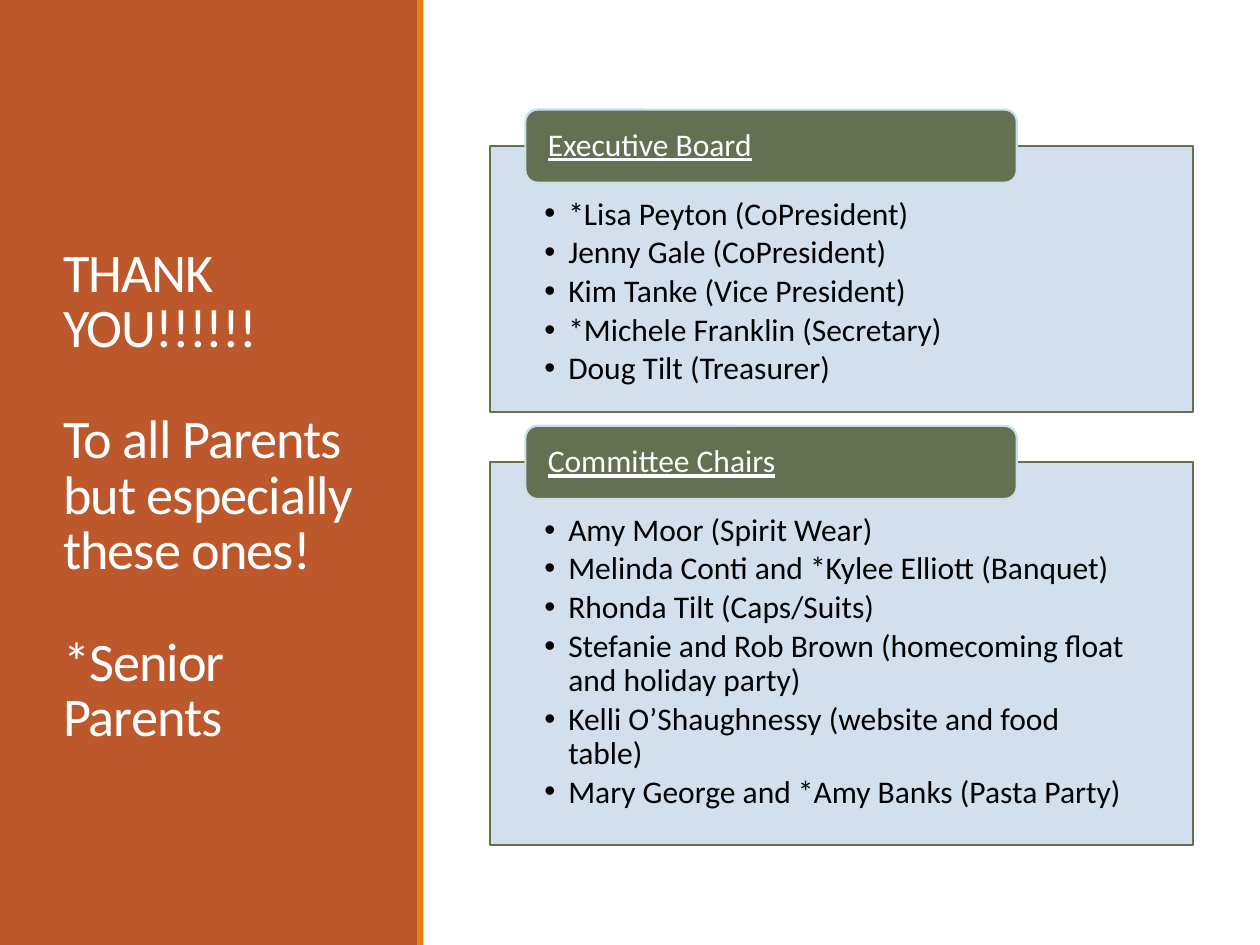
import pptx
import pptx.dml.color
import pptx.enum.shapes
import pptx.enum.text
import pptx.oxml.ns
import pptx.util
from lxml import etree
from pptx.util import Inches, Pt

COLORS = {
    "sidebar": "BD582C",
    "accent": "E48312",
    "panel": "CCDDEA",
    "header": "637052",
    "light": "FFFFFF",
    "dark": "000000",
}
FONT = "Calibri"
MESSAGE = ["THANK YOU!!!!!!", "To all Parents but especially these ones!", "*Senior Parents"]
GROUPS = [
    # heading, top, height, members
    ("Executive Board", 0.87, 2.4, [
        "*Lisa Peyton (CoPresident)",
        "Jenny Gale (CoPresident)",
        "Kim Tanke (Vice President)",
        "*Michele Franklin (Secretary)",
        "Doug Tilt (Treasurer)",
    ]),
    ("Committee Chairs", 3.38, 3.33, [
        "Amy Moor (Spirit Wear)",
        "Melinda Conti and *Kylee Elliott (Banquet)",
        "Rhonda Tilt (Caps/Suits)",
        "Stefanie and Rob Brown (homecoming float and holiday party)",
        "Kelli O’Shaughnessy (website and food table)",
        "Mary George and *Amy Banks (Pasta Party)",
    ]),
]


def rgb(name):
    return pptx.dml.color.RGBColor.from_string(COLORS[name])


def add_block(slide, kind, box, fill, line=None):
    block = slide.shapes.add_shape(kind, *(Inches(length) for length in box))
    block.shadow.inherit = False
    block.fill.solid()
    block.fill.fore_color.rgb = rgb(fill)
    if line:
        block.line.color.rgb = rgb(line)
        block.line.width = Pt(1.25)
    else:
        block.line.fill.background()
    return block


def set_frame(shape, margins, anchor):
    frame = shape.text_frame
    frame.word_wrap = True
    frame.auto_size = pptx.enum.text.MSO_AUTO_SIZE.NONE
    frame.vertical_anchor = anchor
    (frame.margin_left, frame.margin_top,
     frame.margin_right, frame.margin_bottom) = (Inches(margin) for margin in margins)
    return frame


def format_paragraph(paragraph, size, color, line_spacing):
    paragraph.alignment = pptx.enum.text.PP_ALIGN.LEFT
    paragraph.line_spacing = line_spacing
    paragraph.font.name = FONT
    paragraph.font.size = Pt(size)
    paragraph.font.color.rgb = rgb(color)


def add_bullet(paragraph):
    properties = paragraph._p.get_or_add_pPr()
    properties.set("marL", str(Inches(0.19)))
    properties.set("indent", str(Inches(-0.19)))
    for tag, name, value in (("a:buFont", "typeface", "Arial"), ("a:buChar", "char", "•")):
        etree.SubElement(properties, pptx.oxml.ns.qn(tag)).set(name, value)


def add_sidebar(slide, left, top, width, height):
    rectangle = pptx.enum.shapes.MSO_SHAPE.RECTANGLE
    strip_width = 0.05
    background = add_block(slide, rectangle, (left, top, width - strip_width, height), "sidebar")
    add_block(slide, rectangle,
              (left + width - strip_width, top, strip_width, height), "accent")

    # Title stands in front of the coloured background
    title = slide.shapes.title
    title._element.addprevious(background._element)
    title.left, title.top = Inches(left + 0.4), Inches(top + 0.57)
    title.width, title.height = Inches(2.53), Inches(6.31)
    frame = set_frame(title, (0.1, 0.5, 0.1, 0.05), pptx.enum.text.MSO_ANCHOR.MIDDLE)
    frame.text = "\n".join(MESSAGE)
    for index, paragraph in enumerate(frame.paragraphs):
        format_paragraph(paragraph, 31, "light", 0.85)
        paragraph.space_before = Pt(32 if index else 0)
        for run in paragraph.runs:
            run._r.get_or_add_rPr().set("spc", "-50")


def add_group(slide, left, top, width, height, heading, members):
    shapes = pptx.enum.shapes.MSO_SHAPE
    header_height = 0.58
    overlap = header_height / 2

    # Panel with the list of members
    panel = add_block(slide, shapes.RECTANGLE,
                      (left, top + overlap, width, height - overlap), "panel", "header")
    tint = panel.fill._xPr.find(".//" + pptx.oxml.ns.qn("a:srgbClr"))
    etree.SubElement(tint, pptx.oxml.ns.qn("a:alpha")).set("val", "90000")
    frame = set_frame(panel, (0.43, 0.41, 0.43, 0.14), pptx.enum.text.MSO_ANCHOR.TOP)
    frame.text = "\n".join(members)
    for paragraph in frame.paragraphs:
        add_bullet(paragraph)
        format_paragraph(paragraph, 18, "dark", 0.9)
        paragraph.space_after = Pt(2.7)

    # Heading tab across the panel's upper edge
    tab = add_block(slide, shapes.ROUNDED_RECTANGLE,
                    (left + 0.28, top, 3.9, header_height), "header", "panel")
    frame = set_frame(tab, (0.15, 0, 0.15, 0), pptx.enum.text.MSO_ANCHOR.MIDDLE)
    frame.text = heading
    format_paragraph(frame.paragraphs[0], 18, "light", 0.9)
    frame.paragraphs[0].font.underline = True


def main():
    presentation = pptx.Presentation()
    presentation.slide_width, presentation.slide_height = Inches(10), Inches(7.5)
    slide = presentation.slides.add_slide(presentation.slide_layouts[5])
    add_sidebar(slide, 0, 0, 3.36, 7.5)
    for heading, top, height, members in GROUPS:
        add_group(slide, 3.89, top, 5.58, height, heading, members)
    presentation.save("out.pptx")


if __name__ == "__main__":
    main()
